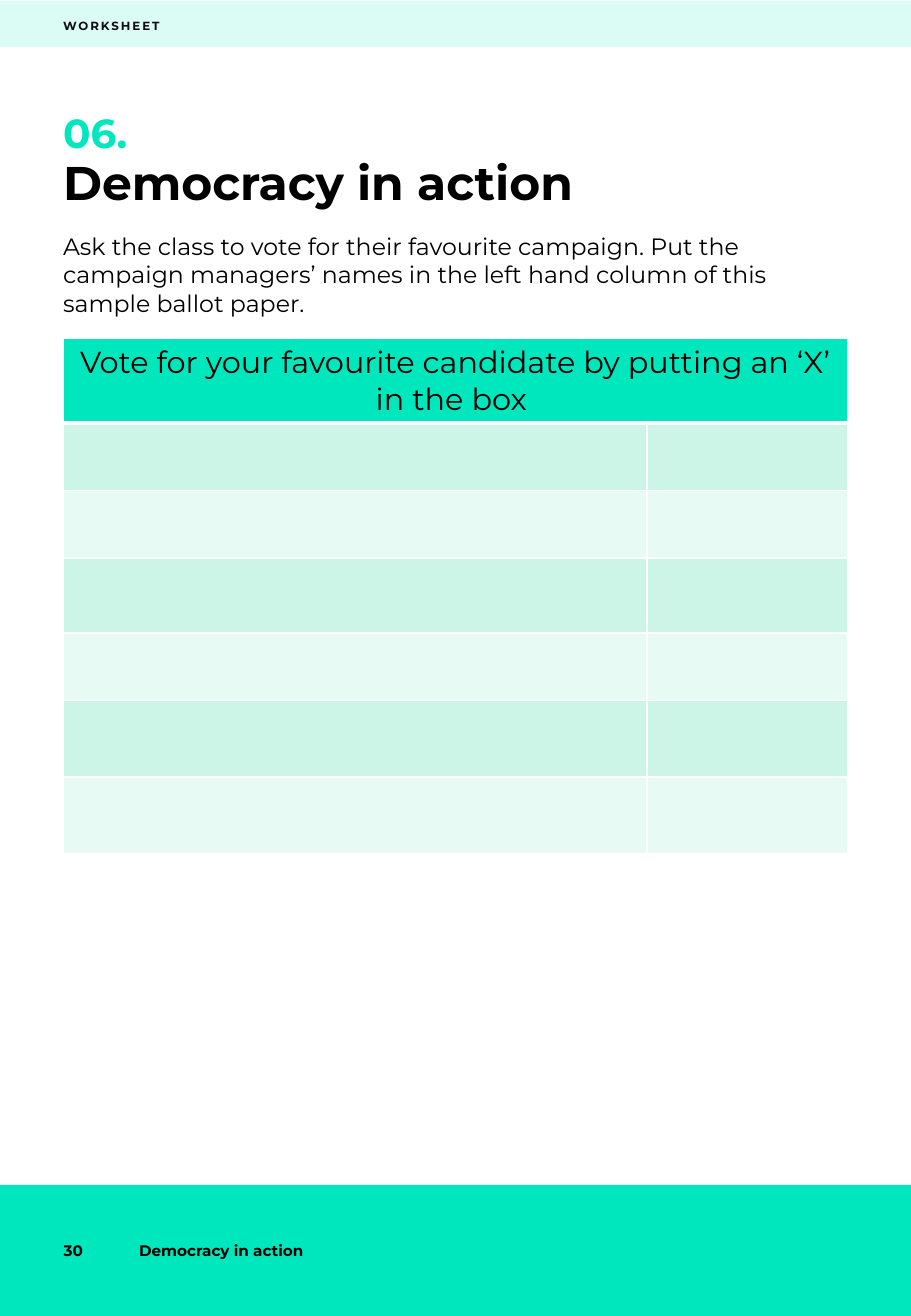
from lxml import etree
from pptx import Presentation
from pptx import util as u
from pptx.dml import color
from pptx.enum import shapes, text
from pptx.oxml import ns

MINT, BLACK, WHITE = "00E7BD", "000000", "FFFFFF"
BANDS = ["CCF5E8", "E7FAF4"]
LEFT, WIDTH = 1.32, 16.41


def rgb(value):
    return color.RGBColor.from_string(value)


class Worksheet:
    font = "Montserrat"

    def __init__(self, slide):
        self.s = slide

    def band(self, top, height, alpha=None):
        sp = self.s.shapes.add_shape(
            shapes.MSO_SHAPE.RECTANGLE, 0, u.Cm(top), u.Cm(19.05), u.Cm(height))
        sp.shadow.inherit = False
        sp.fill.solid()
        sp.fill.fore_color.rgb = rgb(MINT)
        sp.line.fill.background()
        if alpha:
            clr = sp._element.spPr.find(".//" + ns.qn("a:srgbClr"))
            etree.SubElement(clr, ns.qn("a:alpha"), val=str(alpha * 1000))

    def style(self, p, size, bold=False, fill=BLACK):
        for r in p.runs:
            r.font.name = self.font
            r.font.size = u.Pt(size)
            r.font.bold = bold
            r.font.color.rgb = rgb(fill)

    def label(self, words, left, top, width, height, size, bold=True,
              fill=BLACK, middle=False, inset=0, line=None, tracking=None):
        sp = self.s.shapes.add_textbox(u.Cm(left), u.Cm(top), u.Cm(width), u.Cm(height))
        tf = sp.text_frame
        tf.word_wrap = True
        tf.margin_left = tf.margin_right = u.Cm(inset)
        tf.margin_top = tf.margin_bottom = 0
        tf.vertical_anchor = text.MSO_ANCHOR.MIDDLE if middle else text.MSO_ANCHOR.TOP
        tf.text = words
        p = tf.paragraphs[0]
        if line:
            p.line_spacing = line
        self.style(p, size, bold, fill)
        if tracking:
            p.runs[0]._r.get_or_add_rPr().set("spc", str(tracking))

    def borders(self, cell, top, bottom):
        tcPr = cell._tc.get_or_add_tcPr()
        for side, width in (("L", 1), ("R", 1), ("T", top), ("B", bottom)):
            ln = etree.SubElement(tcPr, ns.qn("a:ln" + side), w=str(u.Pt(width)))
            fill = etree.SubElement(ln, ns.qn("a:solidFill"))
            etree.SubElement(fill, ns.qn("a:srgbClr"), val=WHITE)

    def ballot(self, heading, top, columns, heights):
        frame = self.s.shapes.add_table(
            len(heights), len(columns), u.Cm(LEFT), u.Cm(top),
            u.Cm(sum(columns)), u.Cm(sum(heights)))
        table = frame.table
        table.horz_banding = False
        for column, width in zip(table.columns, columns):
            column.width = u.Cm(width)
        for i, (row, height) in enumerate(zip(table.rows, heights)):
            row.height = u.Cm(height)
            for cell in row.cells:
                self.borders(cell, 3 if i == 1 else 1, 3 if i == 0 else 1)
                cell.fill.solid()
                cell.fill.fore_color.rgb = rgb(BANDS[(i - 1) % 2] if i else "00E6BD")
        title = table.cell(0, 0)
        title.merge(table.cell(0, len(columns) - 1))
        title.text_frame.text = heading
        p = title.text_frame.paragraphs[0]
        p.alignment = text.PP_ALIGN.CENTER
        self.style(p, 18)


def main():
    prs = Presentation()
    prs.slide_width, prs.slide_height = u.Cm(19.05), u.Cm(27.53)
    page = Worksheet(prs.slides.add_slide(prs.slide_layouts[6]))

    page.band(24.79, 2.74)
    page.band(0.02, 0.96, alpha=14)
    page.label("Democracy in action", 2.66, 24.79, 7.04, 2.74, 9, middle=True, inset=0.25)
    page.label("30", 1.08, 24.79, 1.58, 2.74, 9, middle=True, inset=0.25)

    page.label("WORKSHEET", LEFT, 0.18, 6.86, 0.71, 7, fill="0D0D0D",
               middle=True, tracking=120)
    page.label("06.", LEFT, 2.26, WIDTH, 0.94, 24, fill=MINT)
    page.label("Democracy in action", LEFT, 3.35, WIDTH, 2.24, 28, line=0.9)
    page.label("Ask the class to vote for their favourite campaign. Put the campaign "
               "managers’ names in the left hand column of this sample ballot paper.",
               LEFT, 4.85, WIDTH, 1.78, 14, bold=False)
    page.ballot("Vote for your favourite candidate by putting an ‘X’ in the box ",
                7.07, [12.21, 4.19], [1.78, 1.41, 1.41, 1.57, 1.41, 1.6, 1.6])
    prs.save("out.pptx")


if __name__ == "__main__":
    main()
